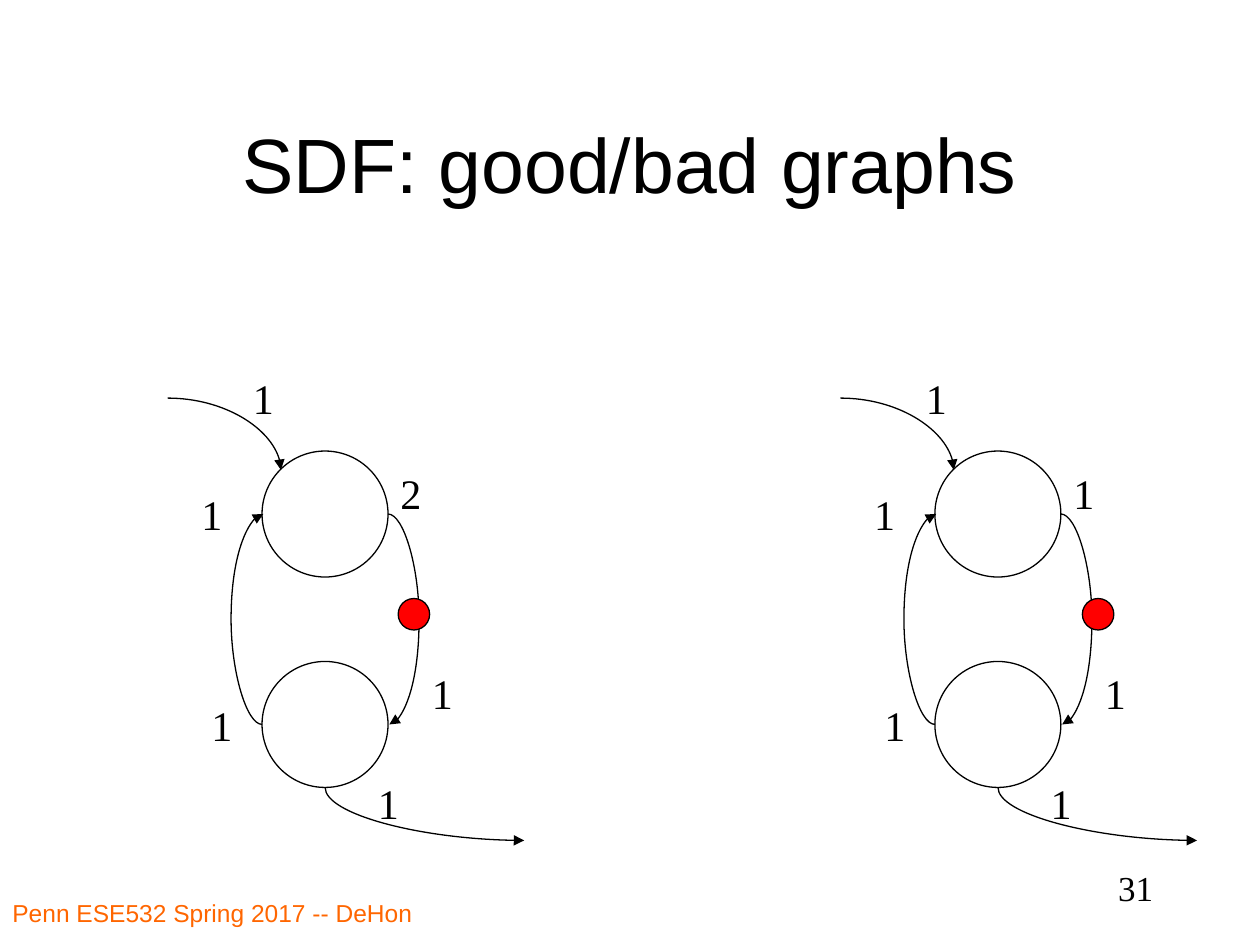
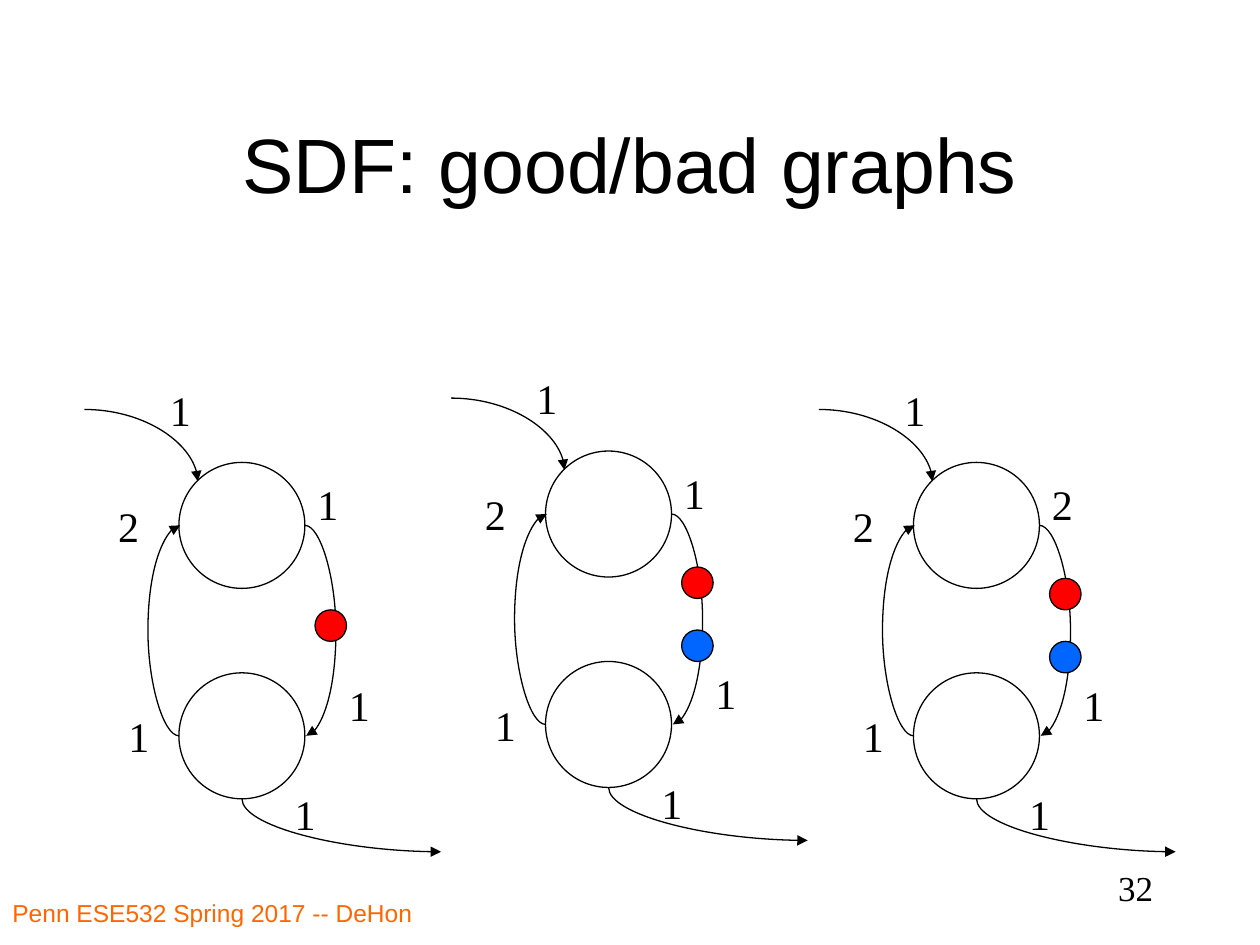
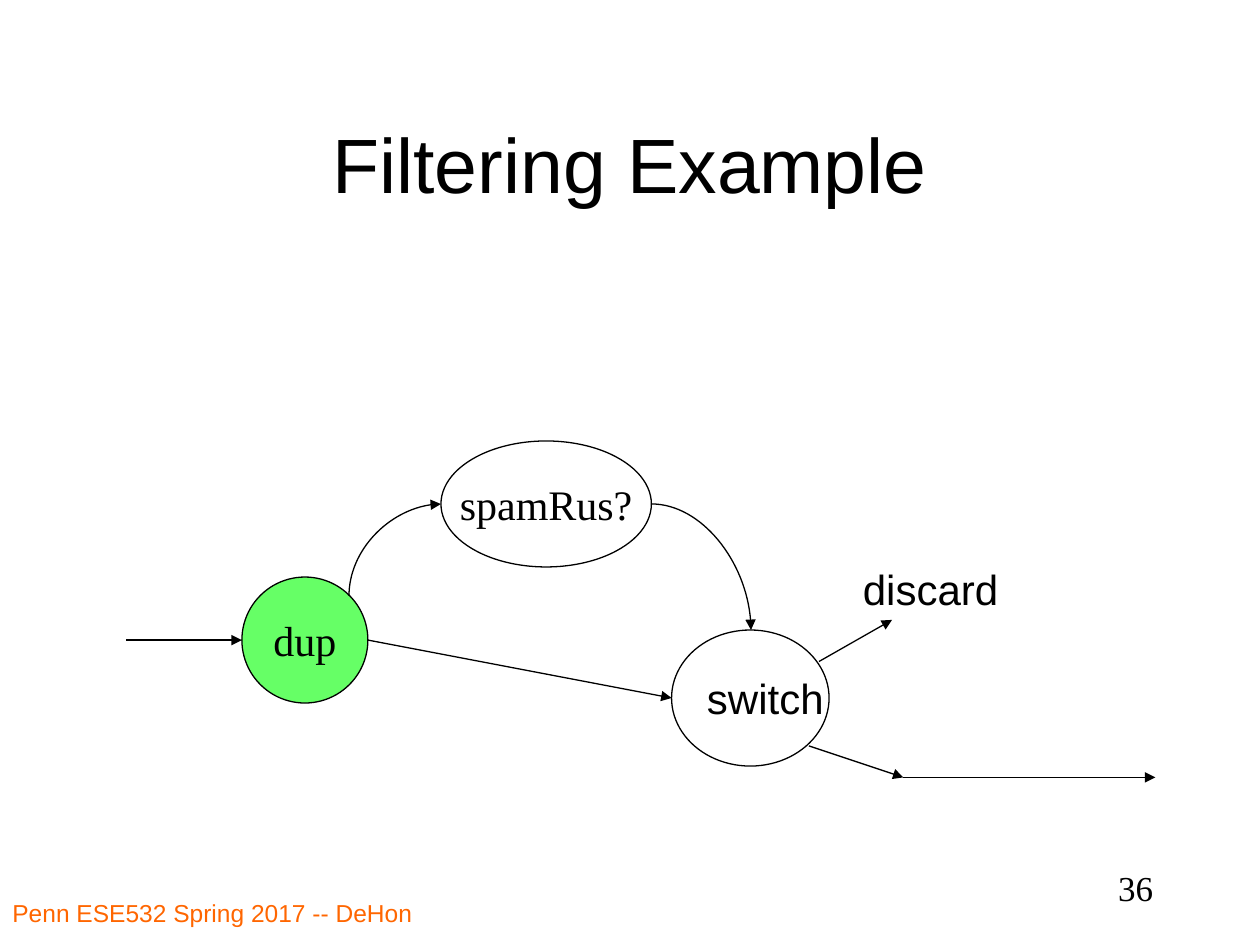
import pptx
import pptx.util
import pptx.dml.color
import pptx.enum.shapes
import pptx.enum.text
import pptx.oxml
import pptx.oxml.ns

Inches, Pt = pptx.util.Inches, pptx.util.Pt
SHAPE = pptx.enum.shapes.MSO_SHAPE
CONNECTOR = pptx.enum.shapes.MSO_CONNECTOR
ALIGN = pptx.enum.text.PP_ALIGN
ANCHOR = pptx.enum.text.MSO_ANCHOR
AUTO = pptx.enum.text.MSO_AUTO_SIZE
qn = pptx.oxml.ns.qn

# Shared style
SANS, SERIF = "Arial", "Times New Roman"
BLACK, WHITE, ORANGE = "000000", "FFFFFF", "FF6600"
RED, BLUE, GREEN = "FF0000", "0066FF", "66FF66"
FOOTER = "Penn ESE532 Spring 2017 -- DeHon"


def color(value):
    return pptx.dml.color.RGBColor.from_string(value)


def add_xml(parent, tag, **attributes):
    child = pptx.oxml.parse_xml(f"<a:{tag} {pptx.oxml.ns.nsdecls('a')}/>")
    for name, value in attributes.items():
        child.set(name, value)
    parent.append(child)
    return child


class Deck:
    def __init__(self):
        self.prs = pptx.Presentation()
        self.prs.slide_width, self.prs.slide_height = Inches(10), Inches(7.5)

    def slide(self, title, number):
        s = self.prs.slides.add_slide(self.prs.slide_layouts[5])
        self.root = self.shapes = s.shapes
        sp = s.shapes.title
        sp.left, sp.top, sp.width, sp.height = map(Inches, (0.75, 0.67, 8.5, 1.25))
        self.set_text(sp, title, 44, align=ALIGN.CENTER, anchor=ANCHOR.MIDDLE)
        self.text(FOOTER, 0, 7.08, 4.58, 0.42, 14, fill=ORANGE)
        self.text(number, 7.17, 6.83, 2.08, 0.5, 20, SERIF, align=ALIGN.RIGHT)

    def group(self):
        """Send the following elements into a new group."""
        self.shapes = self.root.add_group_shape().shapes

    def set_text(self, sp, text, size, font=SANS, fill=BLACK, align=ALIGN.LEFT,
                 anchor=ANCHOR.TOP, wrap=True, auto=AUTO.NONE):
        tf = sp.text_frame
        tf.word_wrap, tf.auto_size, tf.vertical_anchor = wrap, auto, anchor
        p = tf.paragraphs[0]
        p.alignment = align
        r = p.add_run()
        r.text = text
        r.font.size, r.font.name = Pt(size), font
        r.font.color.rgb = color(fill)

    def text(self, text, x, y, w, h, size, font=SANS, **style):
        sp = self.shapes.add_textbox(*map(Inches, (x, y, w, h)))
        self.set_text(sp, text, size, font, **style)

    def label(self, text, x, y, w=0.37, font=SERIF):
        self.text(text, x, y, w, 0.5, 24, font, wrap=False, auto=AUTO.SHAPE_TO_FIT_TEXT)

    def ellipse(self, x, y, w, h, fill=WHITE, text=None, font=SERIF, align=ALIGN.CENTER):
        sp = self.shapes.add_shape(SHAPE.OVAL, *map(Inches, (x, y, w, h)))
        sp.shadow.inherit = False
        sp.fill.solid()
        sp.fill.fore_color.rgb = color(fill)
        sp.line.color.rgb = color(BLACK)
        sp.line.width = Pt(0.75)
        if text:
            self.set_text(sp, text, 24, font, align=align, anchor=ANCHOR.MIDDLE, wrap=False)

    def arrow(self, x1, y1, x2, y2, kind=CONNECTOR.STRAIGHT):
        c = self.shapes.add_connector(kind, *map(Inches, (x1, y1, x2, y2)))
        c.line.color.rgb = color(BLACK)
        c.line.width = Pt(0.75)
        spPr = c.element.spPr
        add_xml(spPr.find(qn("a:ln")), "tailEnd", type="triangle")
        add_xml(spPr, "effectLst")
        return c

    def loop(self, x, y1, y2, bulge):
        """Curve between two points on one vertical, bulging sideways."""
        width = 0.01
        c = self.arrow(x, y1, x + width, y2, CONNECTOR.CURVE)
        guides = c.element.spPr.find(qn("a:prstGeom")).find(qn("a:avLst"))
        add_xml(guides, "gd", name="adj1", fmla=f"val {round(bulge / width * 100000)}")

    def bend(self, x1, y1, x2, y2, vertical=False):
        """Quarter curve to the right, leaving sideways or vertically."""
        c = self.arrow(x1, y1, x2, y2, CONNECTOR.CURVE)
        c.element.spPr.find(qn("a:prstGeom")).set("prst", "curvedConnector2")
        if vertical:
            w, h = x2 - x1, abs(y2 - y1)
            cx, cy = (x1 + x2) / 2, (y1 + y2) / 2
            c.left, c.top = Inches(cx - h / 2), Inches(cy - w / 2)
            c.width, c.height = Inches(h), Inches(w)
            xfrm = c.element.spPr.find(qn("a:xfrm"))
            xfrm.set("rot", str(270 * 60000))
            xfrm.set("flipH", "1" if y2 > y1 else "0")
            xfrm.set("flipV", "0")

    def graph(self, x, y, rates, tokens, token_dx=1.08):
        """Two-node cycle; rates are down-out, down-in, up-in and up-out."""
        self.group()
        for dy in (0, 1.67):
            self.ellipse(x, y + dy, 1, 1)
        self.loop(x + 1, y + 0.5, y + 2.17, 0.25)
        self.loop(x, y + 2.17, y + 0.5, -0.25)
        self.bend(x - 0.75, y - 0.42, x + 0.15, y + 0.15)
        self.bend(x + 0.5, y + 2.67, x + 2.08, y + 3.09, vertical=True)
        places = [(1, 0.08), (1.25, 1.67), (-0.58, 0.25), (-0.5, 1.92),
                  (-0.17, -0.67), (0.82, 2.54)]
        for rate, (dx, dy) in zip(rates + "11", places):
            self.label(rate, x + dx, y + dy)
        first = 1.42 - 0.25 * len(tokens)
        for i, fill in enumerate(tokens):
            self.ellipse(x + token_dx, y + first + 0.5 * i, 0.25, 0.25, fill)


def main():
    d = Deck()

    # Cycles with one token
    d.slide("SDF: good/bad graphs", "31")
    d.graph(2.08, 3.58, "2111", [RED])
    d.graph(7.42, 3.58, "1111", [RED], token_dx=1.17)

    # Cycles with uneven rates
    d.slide("SDF: good/bad graphs", "32")
    d.graph(1.42, 3.67, "1121", [RED])
    d.graph(4.33, 3.58, "1121", [RED, BLUE])
    d.graph(7.25, 3.67, "2121", [RED, BLUE])

    # Filter with a switch
    d.slide("Filtering Example", "36")
    d.ellipse(3.5, 3.5, 1.67, 1, text="spamRus?")
    d.ellipse(5.33, 5, 1.25, 1.08, text="switch", font=SANS, align=ALIGN.LEFT)
    d.ellipse(1.92, 4.58, 1, 1, GREEN, "dup")
    d.label("discard", 6.75, 4.42, 1.29, SANS)
    d.bend(5.17, 4, 5.96, 5)
    d.bend(2.77, 4.73, 3.5, 4, vertical=True)
    for ends in [(1, 5.08, 1.92, 5.08), (2.92, 5.08, 5.33, 5.54),
                 (6.5, 5.25, 7.08, 4.92), (6.42, 5.92, 7.17, 6.17),
                 (7.17, 6.17, 9.17, 6.17)]:
        d.arrow(*ends)

    d.prs.save("out.pptx")


if __name__ == "__main__":
    main()
